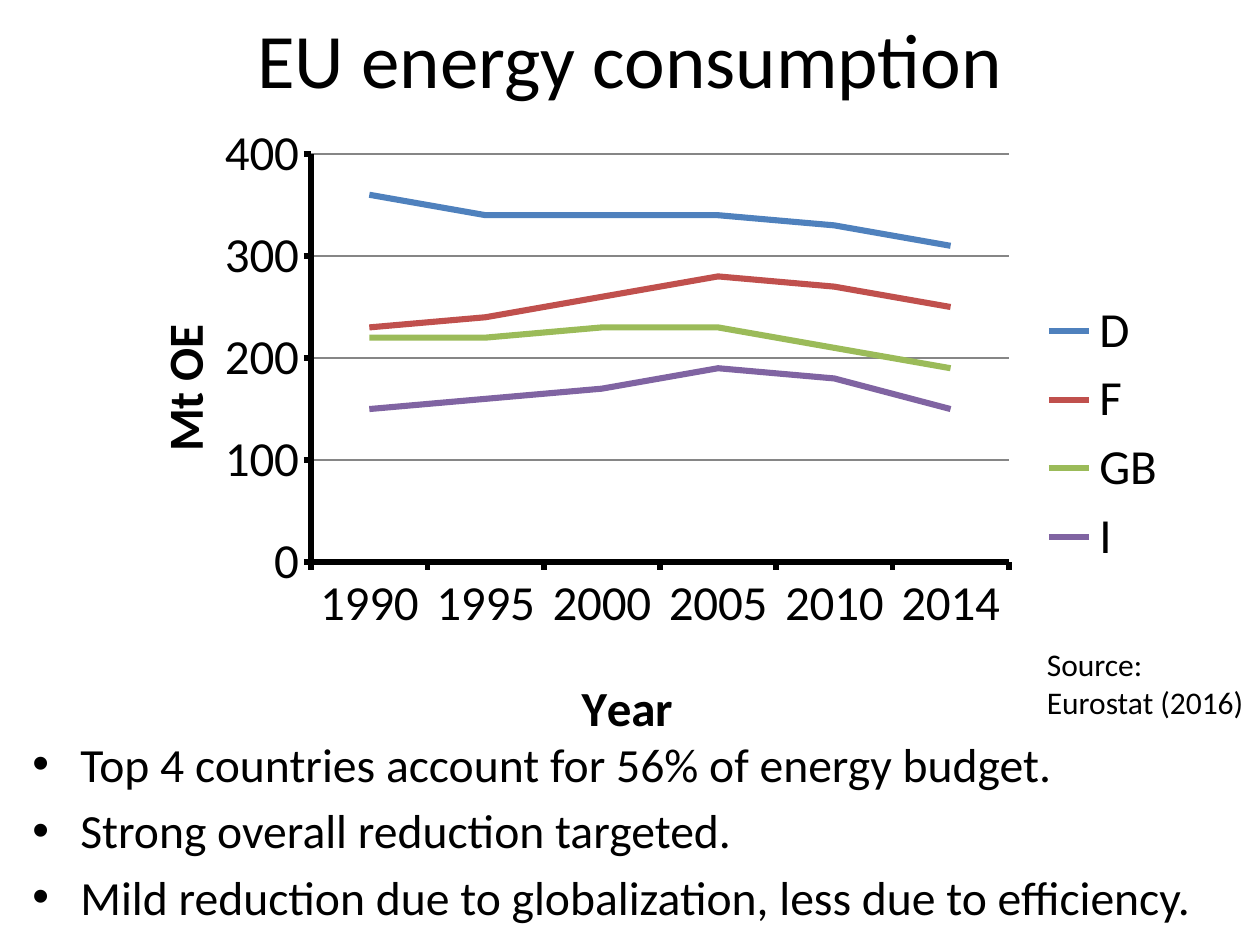
from lxml import etree
from pptx import Presentation, util as u
from pptx.chart.data import CategoryChartData
from pptx.dml.color import RGBColor
from pptx.enum import chart as c, text as t
from pptx.oxml import parse_xml
from pptx.oxml.ns import nsdecls, qn

# Content
TITLE = ["EU energy consumption"]
POINTS = [
    "Top 4 countries account for 56% of energy budget.",
    "Strong overall reduction targeted.",
    "Mild reduction due to globalization, less due to efficiency.",
]
SOURCE = ["Source:", "Eurostat (2016)"]
YEARS = ["1990", "1995", "2000", "2005", "2010", "2014"]
CONSUMPTION = {
    "D": [360, 340, 340, 340, 330, 310],
    "F": [230, 240, 260, 280, 270, 250],
    "GB": [220, 220, 230, 230, 210, 190],
    "I": [150, 160, 170, 190, 180, 150],
}
COLORS = {"text": "000000", "grid": "868686",
          "D": "4F81BD", "F": "C0504D", "GB": "9BBB59", "I": "8064A2"}
FONT = "Calibri"

# Places in inches: left, top, width, height
TITLE_BOX = (0.5, -0.17, 9, 1.25)
CHART_BOX = (0.74, 0.89, 8.65, 5.11)
SOURCE_BOX = (8.21, 5.07, 1.79, 0.71)
POINTS_BOX = (0.16, 5.78, 9.84, 1.64)
BULLET_INDENT = 0.38

# Places inside the chart, as shares of its size
PLOT_AREA = {"x": 0.2, "y": 0.065, "w": 0.64, "h": 0.634}
YEAR_TITLE = {"x": 0.44, "y": 0.86}
UNIT_TITLE = {"x": 0.045, "y": 0.317}


def color(name):
    return RGBColor.from_string(COLORS[name])


def inches(box):
    return [u.Inches(length) for length in box]


def style_font(font, size, bold=False):
    font.name, font.size, font.bold = FONT, u.Pt(size), bold
    font.color.rgb = color("text")


def add_text(slide, lines, box, size, align=t.PP_ALIGN.LEFT,
             anchor=t.MSO_ANCHOR.TOP, wrap=True, bullet=None, gap=0):
    frame = slide.shapes.add_textbox(*inches(box)).text_frame
    frame.word_wrap, frame.vertical_anchor = wrap, anchor
    for index, line in enumerate(lines):
        paragraph = frame.add_paragraph() if index else frame.paragraphs[0]
        paragraph.text, paragraph.alignment = line, align
        paragraph.space_before = u.Pt(gap if index else 0)
        if bullet:
            properties = paragraph._p.get_or_add_pPr()
            indent = u.Inches(BULLET_INDENT)
            properties.set("marL", str(indent))
            properties.set("indent", str(-indent))
            etree.SubElement(properties, qn("a:buFont")).set("typeface", "Arial")
            etree.SubElement(properties, qn("a:buChar")).set("char", bullet)
        style_font(paragraph.runs[0].font, size)
    return frame


def layout_xml(shares, inner=False):
    target = '<c:layoutTarget val="inner"/>' if inner else ""
    modes = "".join(f'<c:{key}Mode val="edge"/>' for key in "xy")
    values = "".join(f'<c:{key} val="{value}"/>' for key, value in shares.items())
    return parse_xml(f'<c:layout {nsdecls("c")}><c:manualLayout>{target}{modes}'
                     f'{values}</c:manualLayout></c:layout>')


def set_layout(element, layout, after=None):
    for old in element.findall(qn("c:layout")):
        element.remove(old)
    element.insert(0 if after is None else element.index(after) + 1, layout)


def style_axis(axis, label, shares):
    frame = axis.axis_title.text_frame
    frame.text = label
    style_font(frame.paragraphs[0].runs[0].font, 28, bold=True)
    title = axis.axis_title._element
    set_layout(title, layout_xml(shares), title.find(qn("c:tx")))
    axis.major_tick_mark = c.XL_TICK_MARK.OUTSIDE
    axis.minor_tick_mark = c.XL_TICK_MARK.NONE
    axis.format.line.color.rgb = color("text")
    axis.format.line.width = u.Pt(3.25)


def add_consumption_chart(slide):
    data = CategoryChartData()
    data.categories = YEARS
    for country, values in CONSUMPTION.items():
        data.add_series(country, values)
    chart = slide.shapes.add_chart(c.XL_CHART_TYPE.LINE, *inches(CHART_BOX), data).chart
    chart.has_title = False
    style_font(chart.font, 28)
    chart.has_legend = True
    chart.legend.position = c.XL_LEGEND_POSITION.RIGHT
    chart.legend.include_in_layout = False

    # Axes and gridlines
    style_axis(chart.category_axis, "Year", YEAR_TITLE)
    style_axis(chart.value_axis, "Mt OE", UNIT_TITLE)
    axis = chart.value_axis
    axis.minimum_scale, axis.maximum_scale, axis.major_unit = 0, 400, 100
    axis.has_major_gridlines = True
    axis.major_gridlines.format.line.color.rgb = color("grid")
    axis.major_gridlines.format.line.width = u.Pt(0.75)

    # Lines
    plot = chart.plots[0]
    plot.vary_by_categories = False
    for series in plot.series:
        series.smooth = False
        series.format.line.color.rgb = color(series.name)
        series.format.line.width = u.Pt(3.5)
    plot_area = chart._chartSpace.find(".//" + qn("c:plotArea"))
    set_layout(plot_area, layout_xml(PLOT_AREA, inner=True))


def main():
    presentation = Presentation()
    presentation.slide_width, presentation.slide_height = u.Inches(10), u.Inches(7.5)
    slide = presentation.slides.add_slide(presentation.slide_layouts[6])
    add_text(slide, TITLE, TITLE_BOX, 44, align=t.PP_ALIGN.CENTER,
             anchor=t.MSO_ANCHOR.MIDDLE)
    add_text(slide, POINTS, POINTS_BOX, 27.2, bullet="•", gap=5.4)
    add_consumption_chart(slide)
    source = add_text(slide, SOURCE, SOURCE_BOX, 18, wrap=False)
    source.auto_size = t.MSO_AUTO_SIZE.SHAPE_TO_FIT_TEXT
    presentation.save("out.pptx")


if __name__ == "__main__":
    main()
